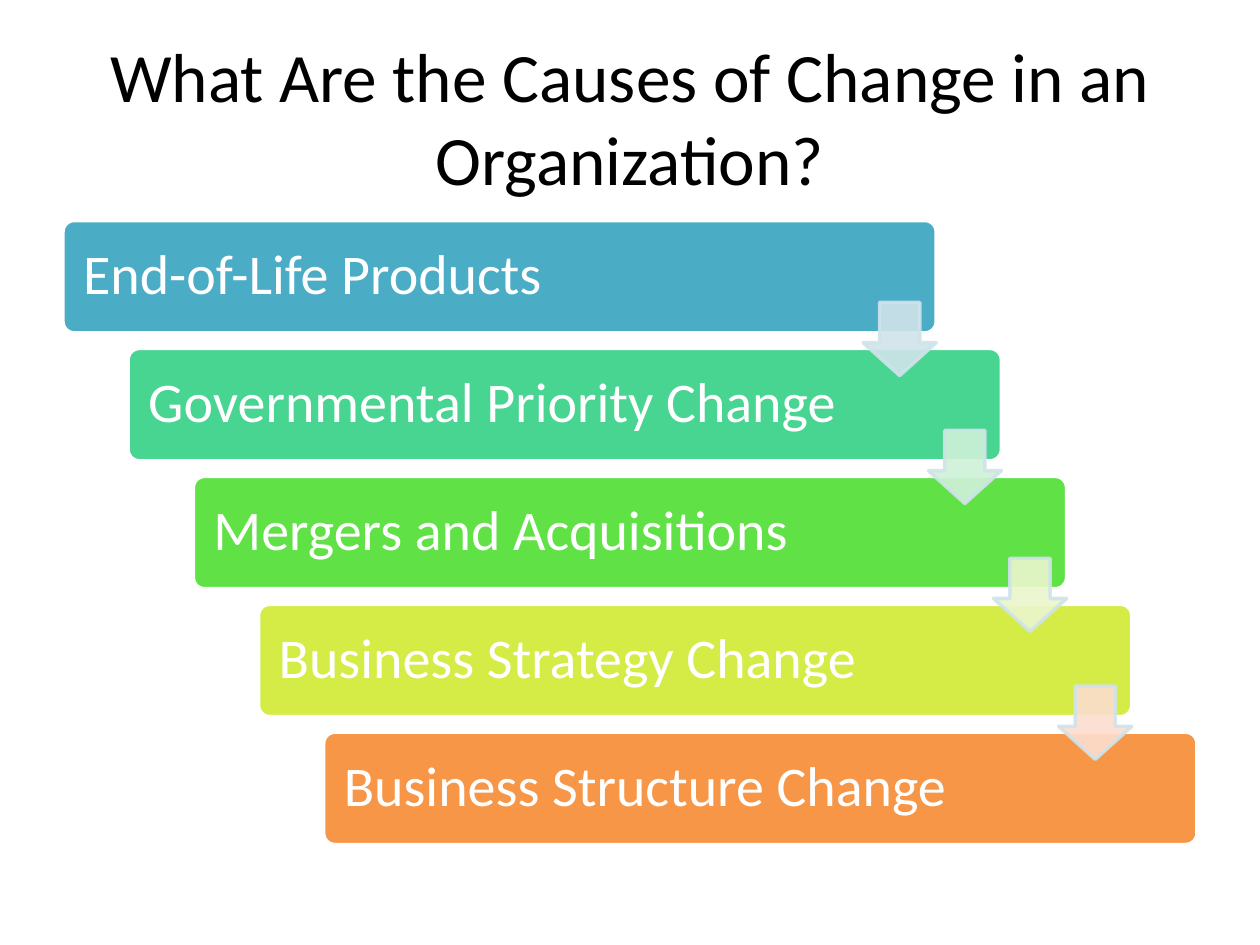
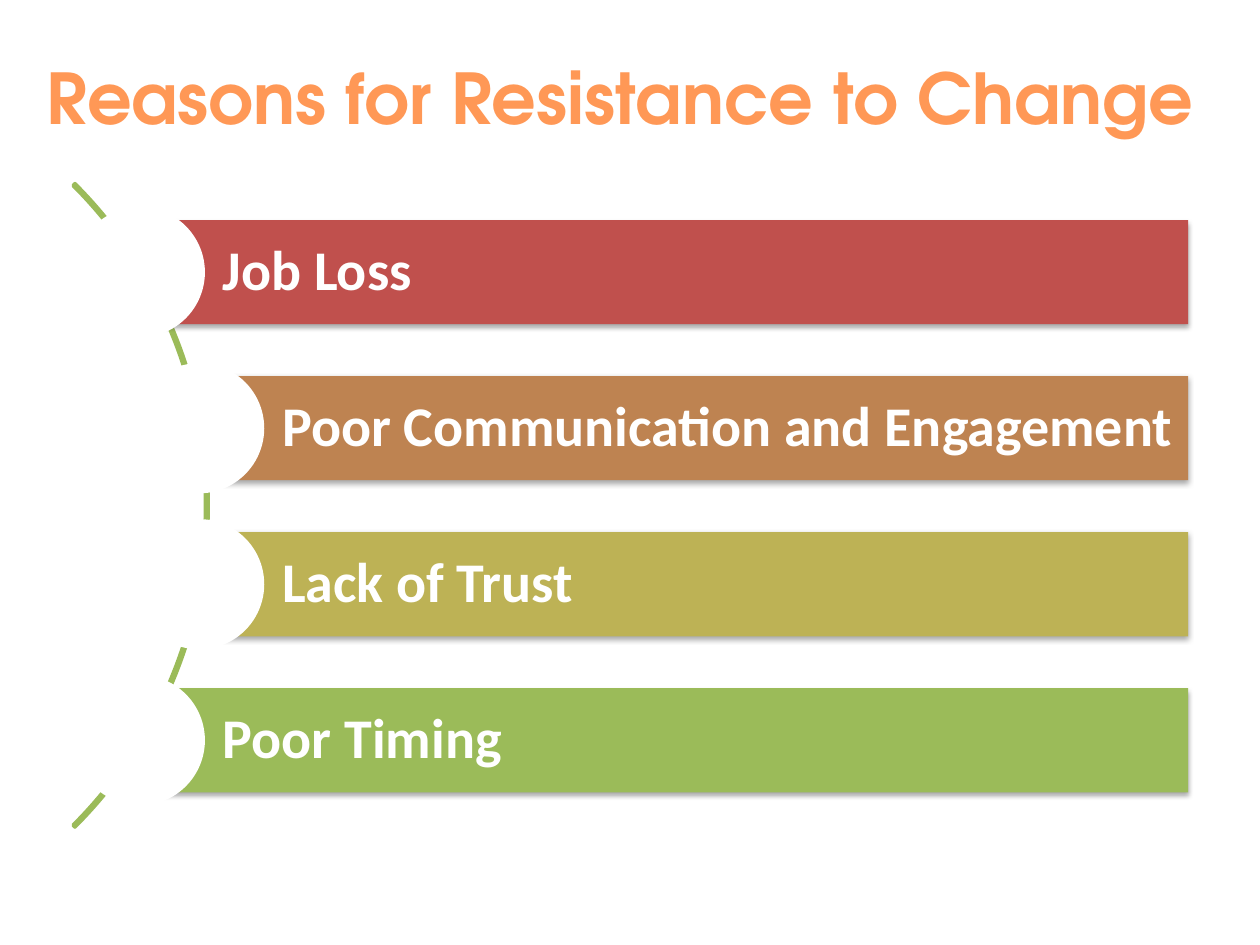
"""Builds two slides on the causes of organizational change and resistance to it."""
from dataclasses import dataclass

from lxml import etree
from pptx import Presentation
from pptx import util as u
from pptx.dml import color
from pptx.enum import shapes, text
from pptx.oxml import ns
from pptx.shapes import autoshape
from pptx.slide import Slide

Shape = autoshape.Shape
Preset = shapes.MSO_SHAPE


@dataclass(frozen=True)
class Theme:
    """Colours, fonts and type sizes shared by the slides."""

    white: str = "FFFFFF"
    black: str = "000000"
    accent: str = "FF9856"
    arrow_edge: str = "D0E3EA"
    arc: str = "9BBB59"
    body_font: str = "Calibri"
    display_font: str = "TeX Gyre Adventor"
    title_size: float = 39.6
    display_size: float = 40
    bar_size: float = 32


@dataclass(frozen=True)
class Box:
    """A rectangle in points."""

    left: float
    top: float
    width: float
    height: float

    def lengths(self) -> tuple[u.Pt, ...]:
        """Return the four sides as lengths."""
        return tuple(map(u.Pt, (self.left, self.top, self.width, self.height)))

    def shifted(self, right: float, down: float) -> "Box":
        """Return the box moved by the given distances."""
        return Box(self.left + right, self.top + down, self.width, self.height)


@dataclass(frozen=True)
class Cause:
    """A stair bar and the colour of the arrow that leads on from it."""

    label: str
    fill: str
    arrow_fill: str | None = None


@dataclass(frozen=True)
class Reason:
    """A bar beside the arc and its left edge."""

    label: str
    fill: str
    left: float


THEME = Theme()

CAUSES = (
    Cause("End-of-Life Products", "4BACC6", "D0E3EA"),
    Cause("Governmental Priority Change", "48D491", "CFF1D9"),
    Cause("Mergers and Acquisitions", "60E146", "EBF7CE"),
    Cause("Business Strategy Change", "D5EC46", "FCDDCF"),
    Cause("Business Structure Change", "F79646"),
)
STAIR_BAR = Box(36, 126, 499, 64.2)
STAIR_ARROW = Box(493.2, 172.8, 41.8, 41.8)
STAIR_RUN, STAIR_DROP = 37.25, 73.1

OUTER_LEFT, INNER_LEFT = 79.9, 113.8
REASONS = (
    Reason("Job Loss", "C0504D", OUTER_LEFT),
    Reason("Poor Communication and Engagement", "BE8351", INNER_LEFT),
    Reason("Lack of Trust", "BDB255", INNER_LEFT),
    Reason("Poor Timing", "9BBB59", OUTER_LEFT),
)
REASON_TOP, REASON_STEP, REASON_HEIGHT = 125.8, 89.15, 59.5
REASON_RIGHT = 679
CIRCLE_SIZE = 74.4
ARC_BOX = Box(-401, 28.8, 520, 520)


def rgb(value: str) -> color.RGBColor:
    """Turn a hex string into a colour."""
    return color.RGBColor.from_string(value)


def set_opacity(element: etree.ElementBase, percent: int) -> None:
    """Set the opacity of each colour inside an element."""
    for colour in element.iter(ns.qn("a:srgbClr")):
        etree.SubElement(colour, ns.qn("a:alpha")).set("val", str(percent * 1000))


def add_shadow(shape: Shape) -> None:
    """Cast a soft shadow straight down."""
    effects = shape.element.spPr.find(ns.qn("a:effectLst"))
    shadow = etree.SubElement(effects, ns.qn("a:outerShdw"))
    lengths = {"blurRad": u.Pt(3.1), "dist": u.Pt(1.8), "dir": 90 * 60000}
    for name, value in lengths.items():
        shadow.set(name, str(value))
    shadow.set("rotWithShape", "0")
    etree.SubElement(shadow, ns.qn("a:srgbClr")).set("val", THEME.black)
    set_opacity(shadow, 35)


def add_shape(slide: Slide, preset: Preset, box: Box, *, fill: str | None = None,
              line: str | None = None, adjustments: tuple[float, ...] = ()) -> Shape:
    """Add a preset shape with plain fill and line."""
    shape = slide.shapes.add_shape(preset, *box.lengths())
    shape.shadow.inherit = False
    for index, value in enumerate(adjustments):
        shape.adjustments[index] = value
    if fill:
        shape.fill.solid()
        shape.fill.fore_color.rgb = rgb(fill)
    else:
        shape.fill.background()
    if line:
        shape.line.color.rgb = rgb(line)
        shape.line.width = u.Pt(2)
    else:
        shape.line.fill.background()
    return shape


def write_text(shape: Shape, words: str, *, size: float, colour: str,
               font: str = THEME.body_font, bold: bool = False, centred: bool = False,
               wrap: bool = True, spacing: float = 1.0,
               insets: tuple[float, float] = (7.2, 7.2)) -> None:
    """Write one vertically centred paragraph, with left and right insets."""
    frame = shape.text_frame
    frame.word_wrap = wrap
    frame.vertical_anchor = text.MSO_ANCHOR.MIDDLE
    frame.margin_left, frame.margin_right = map(u.Pt, insets)
    paragraph = frame.paragraphs[0]
    paragraph.alignment = text.PP_ALIGN.CENTER if centred else text.PP_ALIGN.LEFT
    paragraph.line_spacing = spacing
    run = paragraph.add_run()
    run.text = words
    run.font.name = font
    run.font.size = u.Pt(size)
    run.font.bold = bold
    run.font.color.rgb = rgb(colour)


def add_title(slide: Slide, words: str, box: Box, **text_format) -> None:
    """Add a centred title."""
    title = slide.shapes.add_textbox(*box.lengths())
    write_text(title, words, centred=True, **text_format)


def add_stair_arrow(slide: Slide, box: Box, fill: str) -> None:
    """Add a translucent arrow between two stair bars."""
    arrow = add_shape(slide, Preset.DOWN_ARROW, box, fill=fill,
                      line=THEME.arrow_edge, adjustments=(0.55, 0.45))
    set_opacity(arrow.element.spPr, 90)


def add_reason(slide: Slide, reason: Reason, top: float) -> None:
    """Add a shadowed bar with a white circle cut into its left end."""
    box = Box(reason.left, top, REASON_RIGHT - reason.left, REASON_HEIGHT)
    bar = add_shape(slide, Preset.RECTANGLE, box, fill=reason.fill)
    add_shadow(bar)
    write_text(bar, reason.label, size=THEME.bar_size, colour=THEME.white, bold=True,
               spacing=0.9, insets=(47.4, 6.4))
    radius = CIRCLE_SIZE / 2
    circle = Box(reason.left - radius, top + REASON_HEIGHT / 2 - radius,
                 CIRCLE_SIZE, CIRCLE_SIZE)
    add_shape(slide, Preset.OVAL, circle, fill=THEME.white)


def build_causes(slide: Slide) -> None:
    """Draw the stair of causes."""
    add_title(slide, "What Are the Causes of Change in an Organization?",
              Box(36, 21.6, 648, 90), size=THEME.title_size, colour=THEME.black)
    for step, cause in enumerate(CAUSES):
        box = STAIR_BAR.shifted(step * STAIR_RUN, step * STAIR_DROP)
        bar = add_shape(slide, Preset.ROUNDED_RECTANGLE, box, fill=cause.fill,
                        line=THEME.white, adjustments=(0.1,))
        write_text(bar, cause.label, size=THEME.bar_size, colour=THEME.white,
                   spacing=0.9, insets=(9.6, 9.6))
    for step, cause in enumerate(CAUSES):
        if cause.arrow_fill:
            box = STAIR_ARROW.shifted(step * STAIR_RUN, step * STAIR_DROP)
            add_stair_arrow(slide, box, cause.arrow_fill)


def build_reasons(slide: Slide) -> None:
    """Draw the reasons along an arc."""
    add_shape(slide, Preset.BLOCK_ARC, ARC_BOX, line=THEME.arc,
              adjustments=(189, 27, 0.003))
    for index, reason in enumerate(REASONS):
        add_reason(slide, reason, REASON_TOP + index * REASON_STEP)
    add_title(slide, "Reasons for Resistance to Change", Box(11.5, 27.4, 685.5, 55.4),
              size=THEME.display_size, colour=THEME.accent, font=THEME.display_font,
              bold=True, wrap=False)


def main() -> None:
    """Build and save the presentation."""
    presentation = Presentation()
    presentation.slide_width, presentation.slide_height = u.Pt(720), u.Pt(540)
    blank = presentation.slide_layouts[6]
    for build in (build_causes, build_reasons):
        build(presentation.slides.add_slide(blank))
    presentation.save("out.pptx")


if __name__ == "__main__":
    main()
